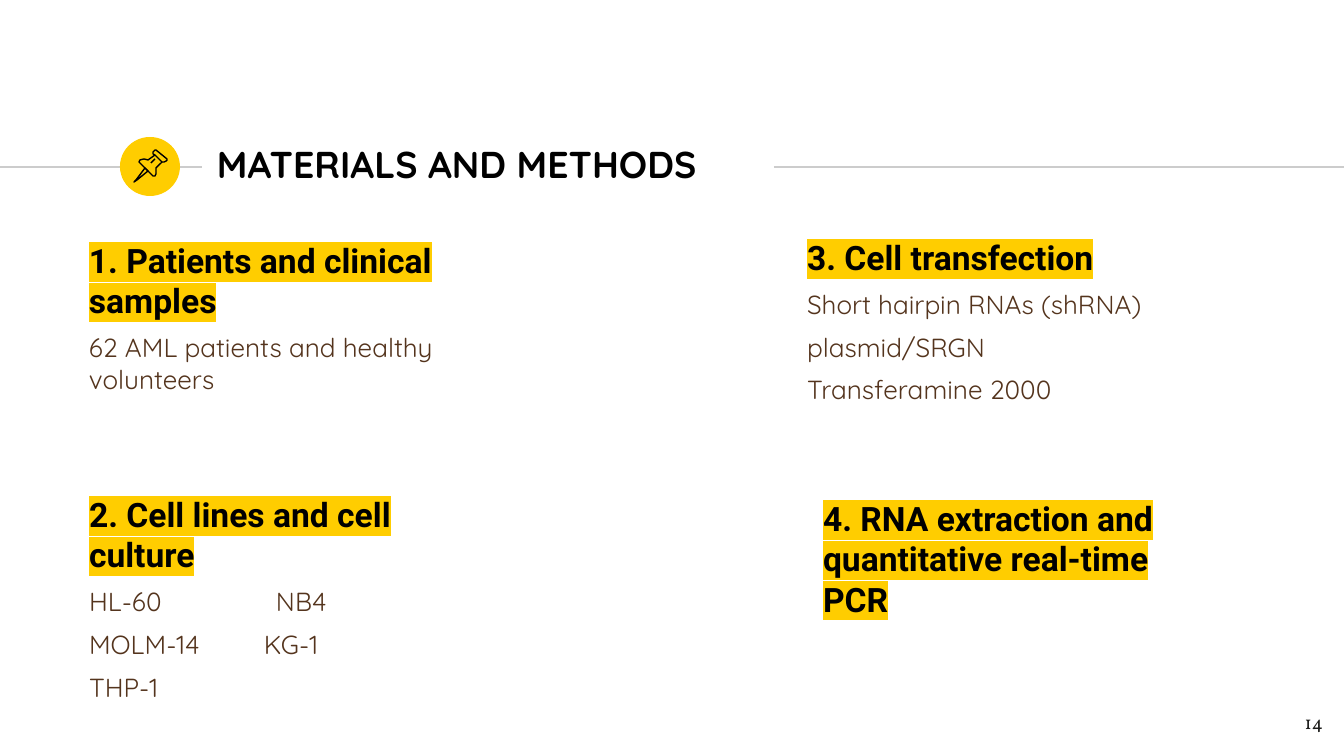
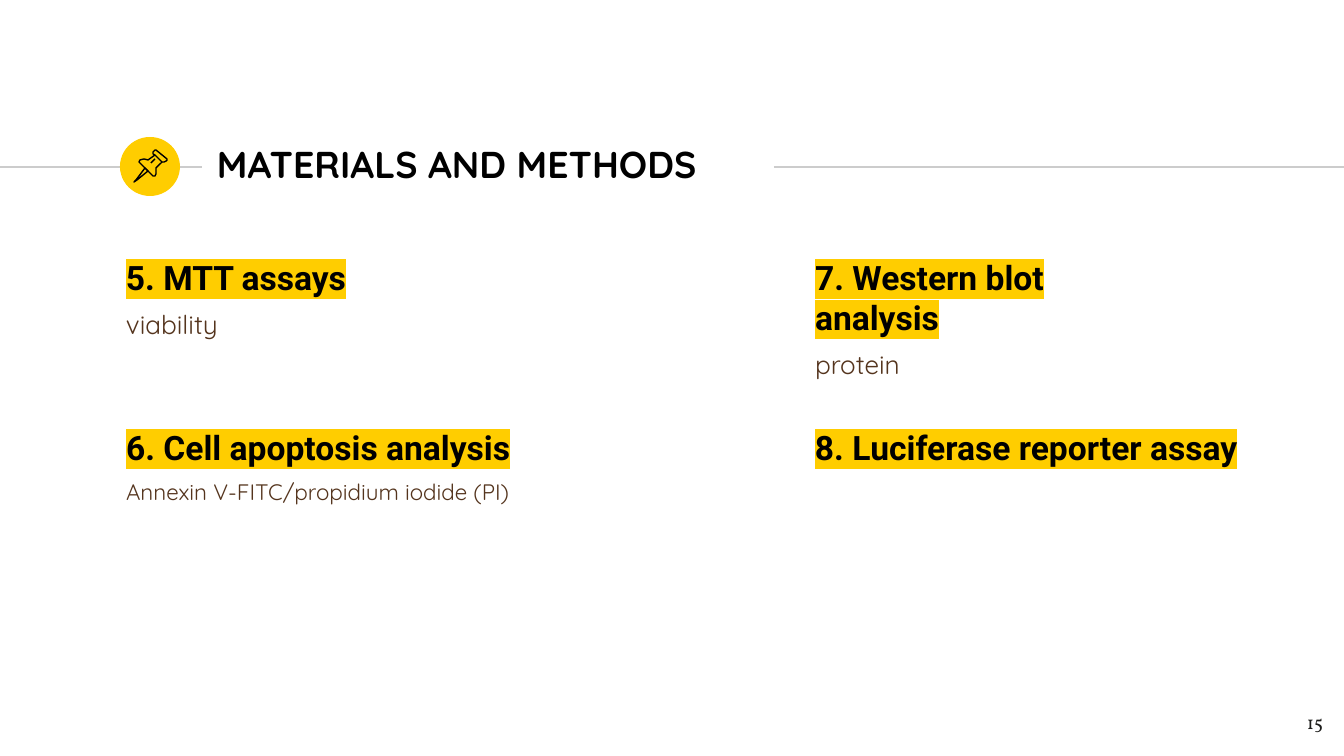
from dataclasses import dataclass
from typing import NamedTuple

from lxml.etree import SubElement
from pptx import Presentation
from pptx.dml.color import RGBColor
from pptx.enum.shapes import MSO_CONNECTOR as Connector, MSO_SHAPE as Shape
from pptx.enum.text import MSO_ANCHOR as Anchor, PP_ALIGN as Align
from pptx.oxml import parse_xml
from pptx.oxml.ns import nsdecls, qn
from pptx.util import Emu, Pt

EMU_PER_PX = 9144000 / 1344


def px(length: int) -> Emu:
    return Emu(round(length * EMU_PER_PX))


class TextStyle(NamedTuple):
    font: str
    size: int
    color: str
    bold: bool = False
    highlight: str = ""


@dataclass(frozen=True)
class Theme:
    accent: str = "FFCD00"
    rule: str = "CCCCCC"
    ink: str = "000000"
    hairline: float = 0.75
    gap: int = 6
    title: TextStyle = TextStyle("Quicksand", 20, "000000", True)
    heading: TextStyle = TextStyle("Roboto", 18, "000000", True, "FFCD00")
    detail: TextStyle = TextStyle("Quicksand", 14, "54341D")
    small_detail: TextStyle = TextStyle("Quicksand", 12, "54341D")
    page_number: TextStyle = TextStyle("Vollkorn", 10, "1D1D1B")


THEME = Theme()


class Box(NamedTuple):
    left: int
    top: int
    width: int
    height: int


class Detail(NamedTuple):
    text: str
    tab: int = 0


@dataclass(frozen=True)
class Method:
    box: Box
    heading: str
    details: tuple[Detail, ...] = ()
    detail_style: TextStyle = THEME.detail


class Stroke(NamedTuple):
    points: tuple[tuple[int, int], ...]
    closed: bool


SLIDE_WIDTH, SLIDE_HEIGHT = 1344, 756
RULE_Y = 167
RULES = ((0, 202), (774, SLIDE_WIDTH))
BADGE = Box(120, 137, 60, 59)
TITLE_BOX = Box(204, 131, 570, 65)
PAGE_NUMBER_BOX = Box(1255, 700, 81, 56)
INSET = 13

PUSHPIN = (
    Stroke(((145, 168), (136, 180), (134, 182), (137, 180), (148, 171)), True),
    Stroke(((155, 155), (162, 162), (164, 162), (166, 161), (167, 160),
            (167, 159), (156, 150), (155, 150), (153, 152), (153, 154)), True),
    Stroke(((155, 155), (148, 160), (144, 159), (140, 160), (139, 162),
            (140, 163), (153, 176), (155, 176), (156, 174), (156, 168),
            (162, 162)), False),
    Stroke(((151, 163), (155, 159)), False),
)

PAGES = {
    14: (
        Method(Box(76, 227, 478, 458), "1. Patients and clinical samples",
               (Detail("62 AML patients and healthy volunteers"),)),
        Method(Box(76, 481, 426, 254), "2. Cell lines and cell culture",
               (Detail("HL‐60\tNB4", 187), Detail("MOLM‐14\tKG‐1", 175),
                Detail("THP‐1"))),
        Method(Box(794, 224, 426, 254), "3. Cell transfection",
               (Detail("Short hairpin RNAs (shRNA)"), Detail("plasmid/SRGN"),
                Detail("Transferamine 2000"))),
        Method(Box(810, 485, 424, 138),
               "4. RNA extraction and quantitative real-time PCR"),
    ),
    15: (
        Method(Box(113, 244, 278, 155), "5. MTT assays", (Detail("viability"),)),
        Method(Box(113, 414, 444, 190), "6. Cell apoptosis analysis",
               (Detail("Annexin V‐FITC/propidium iodide (PI)"),),
               THEME.small_detail),
        Method(Box(802, 244, 384, 155), "7. Western blot analysis",
               (Detail("protein"),)),
        Method(Box(802, 414, 458, 155), "8. Luciferase reporter assay"),
    ),
}


def rgb(color: str) -> RGBColor:
    return RGBColor.from_string(color)


def write(paragraph, text: str, style: TextStyle) -> None:
    paragraph.text = text
    for run in paragraph.runs:
        font = run.font
        font.name, font.size, font.bold = style.font, Pt(style.size), style.bold
        font.color.rgb = rgb(style.color)
        if style.highlight:
            marker = parse_xml(
                f'<a:highlight {nsdecls("a")}>'
                f'<a:srgbClr val="{style.highlight}"/></a:highlight>')
            run._r.rPr.find(qn("a:solidFill")).addnext(marker)


def add_tab_stop(paragraph, position: int) -> None:
    stops = SubElement(paragraph._p.get_or_add_pPr(), qn("a:tabLst"))
    SubElement(stops, qn("a:tab"), pos=str(px(position)), algn="l")


def add_text_frame(slide, box: Box):
    frame = slide.shapes.add_textbox(*map(px, box)).text_frame
    frame.word_wrap = True
    frame.margin_left = frame.margin_right = px(INSET)
    frame.margin_top = frame.margin_bottom = px(INSET)
    return frame


def add_rule(slide, start: int, end: int) -> None:
    rule = slide.shapes.add_connector(
        Connector.STRAIGHT, px(start), px(RULE_Y), px(end), px(RULE_Y))
    rule.line.color.rgb = rgb(THEME.rule)
    rule.line.width = Pt(THEME.hairline)
    SubElement(rule._element.spPr, qn("a:effectLst"))


def add_pushpin(slide) -> None:
    pushpin = slide.shapes.add_group_shape()
    for stroke in PUSHPIN:
        builder = pushpin.shapes.build_freeform(*stroke.points[0], scale=EMU_PER_PX)
        builder.add_line_segments(stroke.points[1:], close=stroke.closed)
        outline = builder.convert_to_shape()
        outline.shadow.inherit = False
        outline.fill.background()
        outline.line.color.rgb = rgb(THEME.ink)
        outline.line.width = Pt(THEME.hairline)


def add_header(slide) -> None:
    for start, end in RULES:
        add_rule(slide, start, end)
    badge = slide.shapes.add_shape(Shape.OVAL, *map(px, BADGE))
    badge.shadow.inherit = False
    badge.fill.solid()
    badge.fill.fore_color.rgb = rgb(THEME.accent)
    badge.line.fill.background()
    add_pushpin(slide)
    title = add_text_frame(slide, TITLE_BOX)
    title.vertical_anchor = Anchor.MIDDLE
    write(title.paragraphs[0], "MATERIALS AND METHODS", THEME.title)


def add_method(slide, method: Method) -> None:
    frame = add_text_frame(slide, method.box)
    heading = frame.paragraphs[0]
    heading.space_before = Pt(THEME.gap)
    write(heading, method.heading, THEME.heading)
    for detail in method.details:
        paragraph = frame.add_paragraph()
        paragraph.space_before = Pt(THEME.gap)
        if detail.tab:
            add_tab_stop(paragraph, detail.tab)
        write(paragraph, detail.text, method.detail_style)


def add_page_number(slide, number: int) -> None:
    paragraph = add_text_frame(slide, PAGE_NUMBER_BOX).paragraphs[0]
    paragraph.alignment = Align.RIGHT
    write(paragraph, str(number), THEME.page_number)


def main() -> None:
    deck = Presentation()
    deck.slide_width, deck.slide_height = px(SLIDE_WIDTH), px(SLIDE_HEIGHT)
    blank = deck.slide_layouts[6]
    for number, methods in PAGES.items():
        slide = deck.slides.add_slide(blank)
        add_header(slide)
        for method in methods:
            add_method(slide, method)
        add_page_number(slide, number)
    deck.save("out.pptx")


if __name__ == "__main__":
    main()
